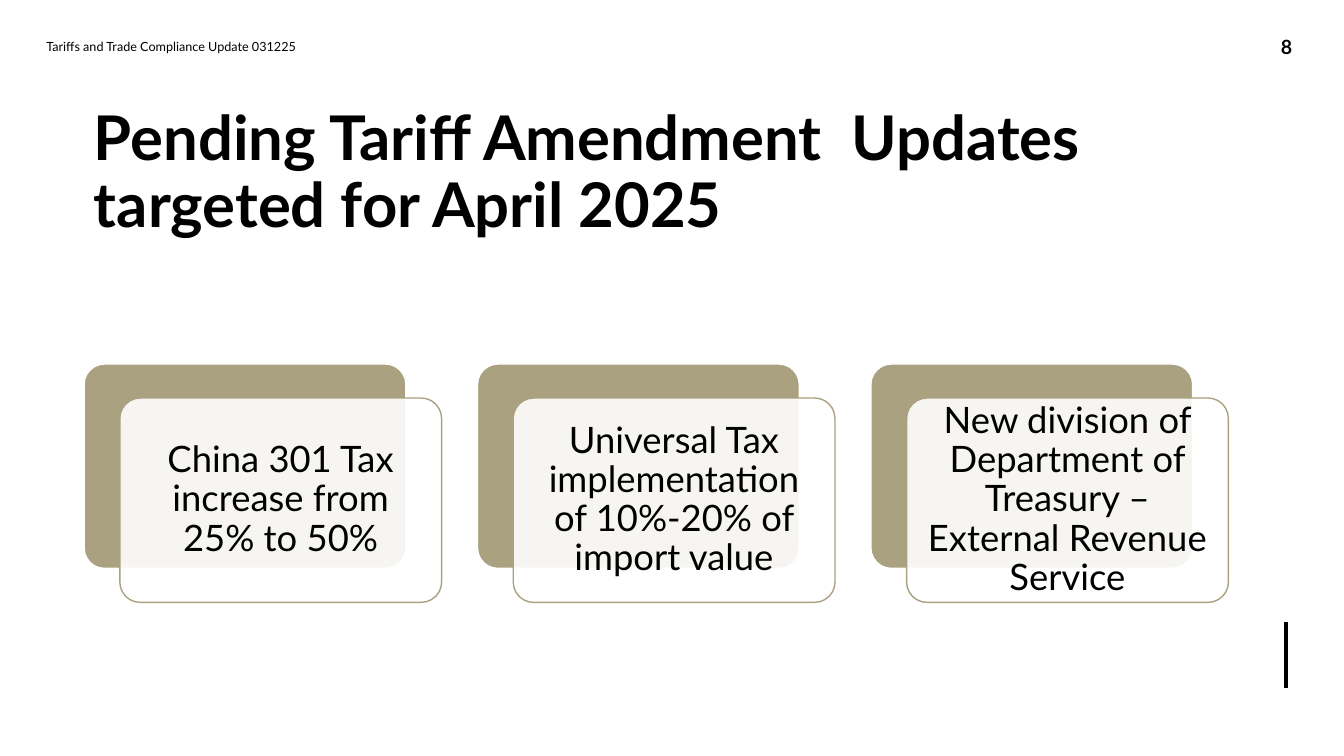
from dataclasses import dataclass, field
from typing import Any

import lxml.etree
import pptx
import pptx.dml.color
import pptx.enum.shapes
import pptx.enum.text
import pptx.oxml.ns
import pptx.util

Pt = pptx.util.Pt
Align = pptx.enum.text.PP_ALIGN
BLACK = pptx.dml.color.RGBColor(0x00, 0x00, 0x00)
WHITE = pptx.dml.color.RGBColor(0xFF, 0xFF, 0xFF)
KHAKI = pptx.dml.color.RGBColor(0xAA, 0xA1, 0x80)

FONT_NAME = "Lato"
CARD_WIDTH, CARD_HEIGHT = 229.9, 146
CARD_LEFT, CARD_TOP = 60.1, 260
CARD_PITCH = 281
FRONT_SHIFT_X, FRONT_SHIFT_Y = 25.5, 24.3
CARD_MARGIN = 7.8
CARD_TEXTS = [
    "China 301 Tax increase from 25% to 50%",
    "Universal Tax implementation of 10%-20% of import value",
    "New division of Department of Treasury –External Revenue Service",
]


@dataclass(frozen=True)
class Label:
    text: str
    left: float
    top: float
    width: float
    height: float
    font: dict[str, Any]
    para: dict[str, Any] = field(default_factory=dict)


LABELS = [
    Label("Pending Tariff Amendment  Updates targeted for April 2025",
          60, 67.7, 755, 113, {"size": Pt(44), "bold": True}, {"line_spacing": 0.9}),
    Label("Tariffs and Trade Compliance Update 031225",
          26, 18.7, 324, 29, {"size": Pt(9)}, {"space_after": Pt(6)}),
    Label("8", 889, 18.7, 60, 29, {"size": Pt(14), "bold": True},
          {"alignment": Align.CENTER, "space_after": Pt(6)}),
]


def apply_format(target: Any, values: dict[str, Any]) -> None:
    for name, value in values.items():
        setattr(target, name, value)


def write_text(box: Any, text: str, font: dict[str, Any], para_format: dict[str, Any]) -> None:
    frame = box.text_frame
    apply_format(frame, {"word_wrap": True,
                         "vertical_anchor": pptx.enum.text.MSO_ANCHOR.MIDDLE})
    para = frame.paragraphs[0]
    apply_format(para, para_format)
    span = para.add_run()
    span.text = text
    apply_format(span.font, {"name": FONT_NAME, **font})
    span.font.color.rgb = BLACK


def add_label(page: Any, label: Label) -> None:
    box = page.shapes.add_textbox(Pt(label.left), Pt(label.top), Pt(label.width), Pt(label.height))
    write_text(box, label.text, label.font, label.para)


def add_panel(page: Any, left: float, top: float, fill: pptx.dml.color.RGBColor,
              outline: pptx.dml.color.RGBColor) -> Any:
    panel = page.shapes.add_shape(pptx.enum.shapes.MSO_SHAPE.ROUNDED_RECTANGLE,
                                  Pt(left), Pt(top), Pt(CARD_WIDTH), Pt(CARD_HEIGHT))
    panel.adjustments[0] = 0.1
    panel.shadow.inherit = False
    panel.fill.solid()
    panel.fill.fore_color.rgb = fill
    panel.line.color.rgb = outline
    panel.line.width = Pt(1)
    return panel


def add_card(page: Any, left: float, text: str) -> None:
    add_panel(page, left, CARD_TOP, KHAKI, WHITE)
    front = add_panel(page, left + FRONT_SHIFT_X, CARD_TOP + FRONT_SHIFT_Y, WHITE, KHAKI)
    fill_color = front.fill._xPr.find(".//" + pptx.oxml.ns.qn("a:srgbClr"))
    lxml.etree.SubElement(fill_color, pptx.oxml.ns.qn("a:alpha"), val="90000")
    sides = ("left", "top", "right", "bottom")
    apply_format(front.text_frame, {f"margin_{side}": Pt(CARD_MARGIN) for side in sides})
    write_text(front, text, {"size": Pt(26)}, {"alignment": Align.CENTER, "line_spacing": 0.9})


def add_accent(page: Any) -> None:
    accent = page.shapes.add_connector(pptx.enum.shapes.MSO_CONNECTOR.STRAIGHT,
                                       Pt(918.6), Pt(444.4), Pt(918.6), Pt(491.2))
    accent.line.color.rgb = BLACK
    accent.line.width = Pt(3)
    lxml.etree.SubElement(accent._element.spPr, pptx.oxml.ns.qn("a:effectLst"))


def main() -> None:
    deck = pptx.Presentation()
    apply_format(deck, {"slide_width": Pt(960), "slide_height": Pt(540)})
    page = deck.slides.add_slide(deck.slide_layouts[6])
    page.background.fill.solid()
    page.background.fill.fore_color.rgb = WHITE
    for label in LABELS:
        add_label(page, label)
    add_accent(page)
    for index, text in enumerate(CARD_TEXTS):
        add_card(page, CARD_LEFT + index * CARD_PITCH, text)
    deck.save("out.pptx")


if __name__ == "__main__":
    main()
